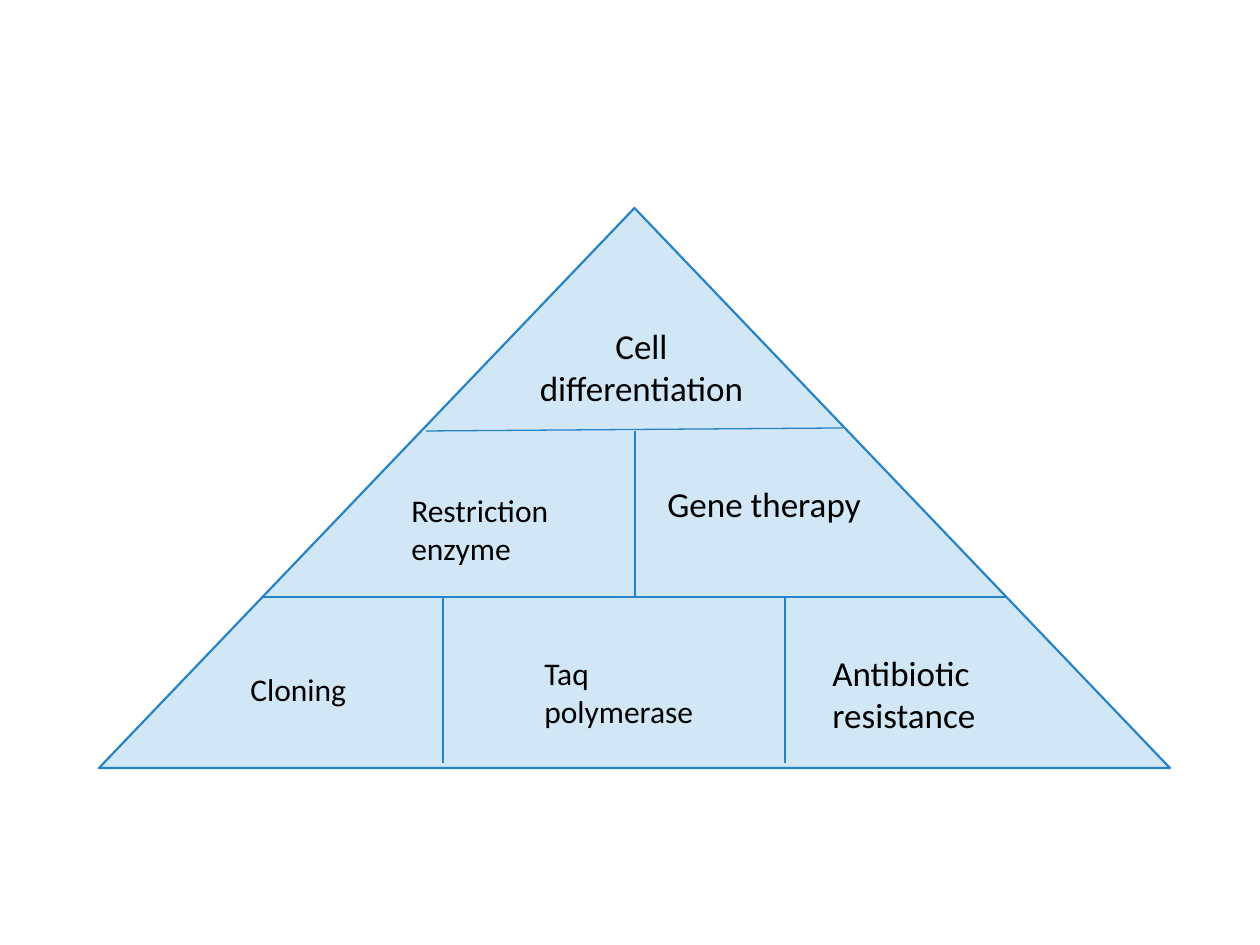
import pptx
import pptx.dml.color
import pptx.enum.shapes
import pptx.enum.text
import pptx.oxml
import pptx.oxml.ns
import pptx.util

PX_PER_INCH = 126
EMU_PER_PX = pptx.util.Inches(1) / PX_PER_INCH

WHITE = pptx.dml.color.RGBColor(0xFF, 0xFF, 0xFF)
PALE_BLUE = pptx.dml.color.RGBColor(0xD1, 0xE7, 0xF6)
BLUE = pptx.dml.color.RGBColor(0x26, 0x83, 0xC6)
BLACK = pptx.dml.color.RGBColor(0, 0, 0)

LEFT = pptx.enum.text.PP_ALIGN.LEFT
CENTER = pptx.enum.text.PP_ALIGN.CENTER


def emu(*lengths):
    """Turn px lengths into EMU."""
    return [pptx.util.Emu(round(length * EMU_PER_PX)) for length in lengths]


class Diagram:
    """Draws on one slide in one style."""

    font = "Calibri"

    def __init__(self, slide):
        self.slide = slide
        slide.background.fill.solid()
        slide.background.fill.fore_color.rgb = WHITE

    def triangle(self, left, top, width, height):
        shape = self.slide.shapes.add_shape(
            pptx.enum.shapes.MSO_SHAPE.ISOSCELES_TRIANGLE,
            *emu(left, top, width, height))
        shape.shadow.inherit = False
        shape.fill.solid()
        shape.fill.fore_color.rgb = PALE_BLUE
        shape.line.color.rgb = BLUE
        shape.line.width = pptx.util.Pt(1.25)

    def divider(self, x1, y1, x2, y2):
        line = self.slide.shapes.add_connector(
            pptx.enum.shapes.MSO_CONNECTOR.STRAIGHT, *emu(x1, y1, x2, y2))
        line.line.color.rgb = BLUE
        line.line.width = pptx.util.Pt(0.75)
        properties = line._element.spPr
        properties.append(pptx.oxml.parse_xml(
            f"<a:effectLst {pptx.oxml.ns.nsdecls('a')}/>"))

    def text(self, words, left, top, width, height, size=18, align=LEFT):
        frame = self.slide.shapes.add_textbox(
            *emu(left, top, width, height)).text_frame
        frame.word_wrap = True
        frame.auto_size = pptx.enum.text.MSO_AUTO_SIZE.SHAPE_TO_FIT_TEXT
        paragraph = frame.paragraphs[0]
        paragraph.alignment = align
        run = paragraph.add_run()
        run.text = words
        run.font.name = self.font
        run.font.size = pptx.util.Pt(size)
        run.font.color.rgb = BLACK


def main():
    deck = pptx.Presentation()
    deck.slide_width, deck.slide_height = emu(1260, 945)
    blank_layout = deck.slide_layouts[6]
    pyramid = Diagram(deck.slides.add_slide(blank_layout))

    pyramid.triangle(99, 208, 1071, 560)

    upper, lower, foot = 431, 597, 763
    pyramid.divider(263, lower, 1006, lower)
    pyramid.divider(426, upper, 843, 428)
    pyramid.divider(635, upper, 635, lower)
    for x in (443, 785):
        pyramid.divider(x, lower, x, foot)

    pyramid.text("Cell differentiation", 522, 318, 239, 97,
                 size=20, align=CENTER)
    pyramid.text("Restriction enzyme", 399, 485, 213, 89)
    pyramid.text("Gene therapy", 655, 476, 223, 55, size=20)
    pyramid.text("Cloning", 238, 664, 219, 50)
    pyramid.text("Taq polymerase", 532, 648, 219, 89)
    pyramid.text("Antibiotic resistance", 820, 645, 223, 97, size=20)

    deck.save("out.pptx")


if __name__ == "__main__":
    main()
